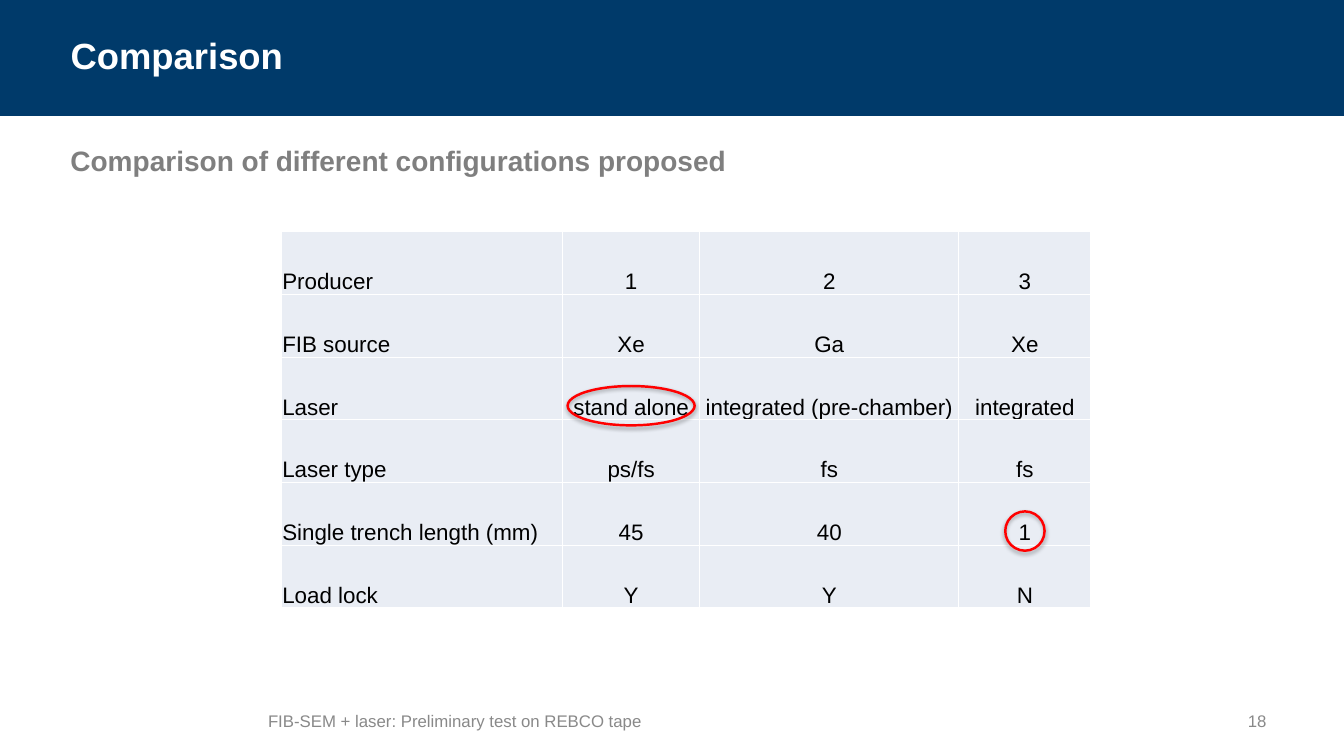
from lxml.etree import SubElement
from pptx import Presentation
from pptx.dml.color import RGBColor
from pptx.enum.shapes import MSO_SHAPE
from pptx.enum.text import MSO_ANCHOR, MSO_AUTO_SIZE, PP_ALIGN
from pptx.oxml.ns import qn
from pptx.util import Inches, Pt

COLORS = {
    "band": "003A6A", "title": "FFFFFF", "subtitle": "7F7F7F", "footer": "898989",
    "cell": "E9EDF4", "border": "FFFFFF", "text": "000000", "mark": "FF0000",
}
COMPARISON = [
    ("Producer", "1", "2", "3"),
    ("FIB source", "Xe", "Ga", "Xe"),
    ("Laser", "stand alone", "integrated (pre-chamber)", "integrated"),
    ("Laser type", "ps/fs", "fs", "fs"),
    ("Single trench length (mm)", "45", "40", "1"),
    ("Load lock", "Y", "Y", "N"),
]
COLUMN_WIDTHS = [2.79, 1.36, 2.57, 1.31]
ROW_HEIGHT = 3.73 / len(COMPARISON)


def color(name):
    """Return the named colour."""
    return RGBColor.from_string(COLORS[name])


def write(frame, text, size, color_name, bold=False, align=PP_ALIGN.LEFT):
    """Write one styled line into a text frame."""
    paragraph = frame.paragraphs[0]
    paragraph.alignment = align
    run = paragraph.add_run()
    run.text = text
    run.font.name = "Arial"
    run.font.size = Pt(size)
    run.font.bold = bold
    run.font.color.rgb = color(color_name)


def add_header(slide, left, top, width, height):
    """Place the band with the slide title on it."""
    band = slide.shapes.add_shape(
        MSO_SHAPE.RECTANGLE, Inches(left), Inches(top), Inches(width), Inches(height))
    band.shadow.inherit = False
    band.fill.solid()
    band.fill.fore_color.rgb = color("band")
    band.line.fill.background()
    title = slide.shapes.title
    title.element.addprevious(band.element)
    title.left, title.top = Inches(left + 0.6), Inches(top + 0.33)
    title.width, title.height = Inches(12), Inches(0.43)
    frame = title.text_frame
    frame.auto_size = MSO_AUTO_SIZE.SHAPE_TO_FIT_TEXT
    frame.vertical_anchor = MSO_ANCHOR.MIDDLE
    frame.margin_top = frame.margin_bottom = 0
    write(frame, "Comparison", 26, "title", bold=True)


def add_label(slide, left, top, width, height, anchor, *style, **options):
    """Place a wrapped text box with one line."""
    label = slide.shapes.add_textbox(Inches(left), Inches(top), Inches(width), Inches(height))
    label.text_frame.word_wrap = True
    label.text_frame.vertical_anchor = anchor
    write(label.text_frame, *style, **options)


def format_cell(cell):
    """Give a table cell its borders, fill, margins and anchor."""
    properties = cell._tc.get_or_add_tcPr()
    for side in ("a:lnL", "a:lnR", "a:lnT", "a:lnB"):
        border = SubElement(properties, qn(side), w=str(Pt(1)))
        fill = SubElement(border, qn("a:solidFill"))
        SubElement(fill, qn("a:srgbClr"), val=COLORS["border"])
    cell.fill.solid()
    cell.fill.fore_color.rgb = color("cell")
    cell.margin_left = cell.margin_right = cell.margin_top = Inches(0.01)
    cell.margin_bottom = 0
    cell.vertical_anchor = MSO_ANCHOR.BOTTOM


def add_comparison(slide, left, top):
    """Place the comparison table and circle its two notable values."""
    table = slide.shapes.add_table(
        len(COMPARISON), len(COLUMN_WIDTHS), Inches(left), Inches(top),
        Inches(sum(COLUMN_WIDTHS)), Inches(ROW_HEIGHT * len(COMPARISON))).table
    table.first_row = table.horz_banding = False
    for column, width in zip(table.columns, COLUMN_WIDTHS):
        column.width = Inches(width)
    for row_index, values in enumerate(COMPARISON):
        table.rows[row_index].height = Inches(ROW_HEIGHT)
        for column_index, value in enumerate(values):
            cell = table.cell(row_index, column_index)
            format_cell(cell)
            align = PP_ALIGN.CENTER if column_index else PP_ALIGN.LEFT
            write(cell.text_frame, value, 16, "text", align=align)
    for row_index, column_index, width in ((4, 3, 0.39), (2, 1, 1.26)):
        center = left + sum(COLUMN_WIDTHS[:column_index]) + COLUMN_WIDTHS[column_index] / 2
        middle = top + ROW_HEIGHT * (row_index + 1) - 0.14
        add_mark(slide, center, middle, width, 0.39)


def add_mark(slide, center, middle, width, height):
    """Place a red ring with a soft shadow around a point."""
    ring = slide.shapes.add_shape(
        MSO_SHAPE.OVAL, Inches(center - width / 2), Inches(middle - height / 2),
        Inches(width), Inches(height))
    ring.fill.background()
    ring.line.color.rgb = color("mark")
    ring.line.width = Pt(1.75)
    ring.shadow.inherit = False
    effects = ring.element.spPr.find(qn("a:effectLst"))
    shadow = SubElement(effects, qn("a:outerShdw"), blurRad=str(Pt(3.1)),
                        dist=str(Pt(1.8)), dir="5400000", rotWithShape="0")
    tint = SubElement(shadow, qn("a:srgbClr"), val=COLORS["text"])
    SubElement(tint, qn("a:alpha"), val="35000")


def main():
    """Build and save the slide."""
    presentation = Presentation()
    presentation.slide_width, presentation.slide_height = Inches(13.33), Inches(7.5)
    slide = presentation.slides.add_slide(presentation.slide_layouts[5])
    add_header(slide, 0, 0, 13.33, 1.15)
    add_label(slide, 0.6, 1.37, 12, 0.43, MSO_ANCHOR.TOP,
              "Comparison of different configurations proposed", 20, "subtitle", bold=True)
    add_comparison(slide, 2.79, 2.3)
    add_label(slide, 2.56, 6.95, 9.21, 0.4, MSO_ANCHOR.MIDDLE,
              "FIB-SEM + laser: Preliminary test on REBCO tape", 12, "footer")
    add_label(slide, 11.95, 6.95, 0.71, 0.4, MSO_ANCHOR.MIDDLE,
              "18", 12, "footer", align=PP_ALIGN.RIGHT)
    presentation.save("out.pptx")


if __name__ == "__main__":
    main()
